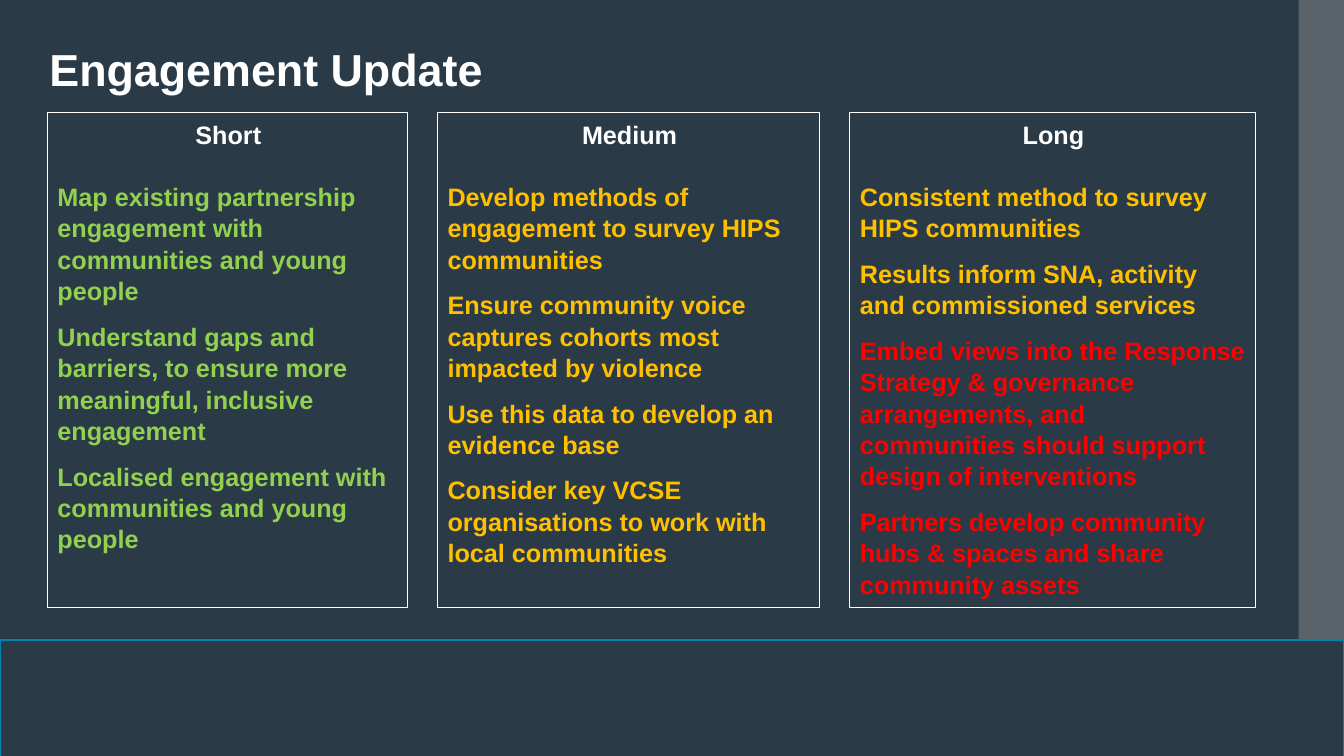
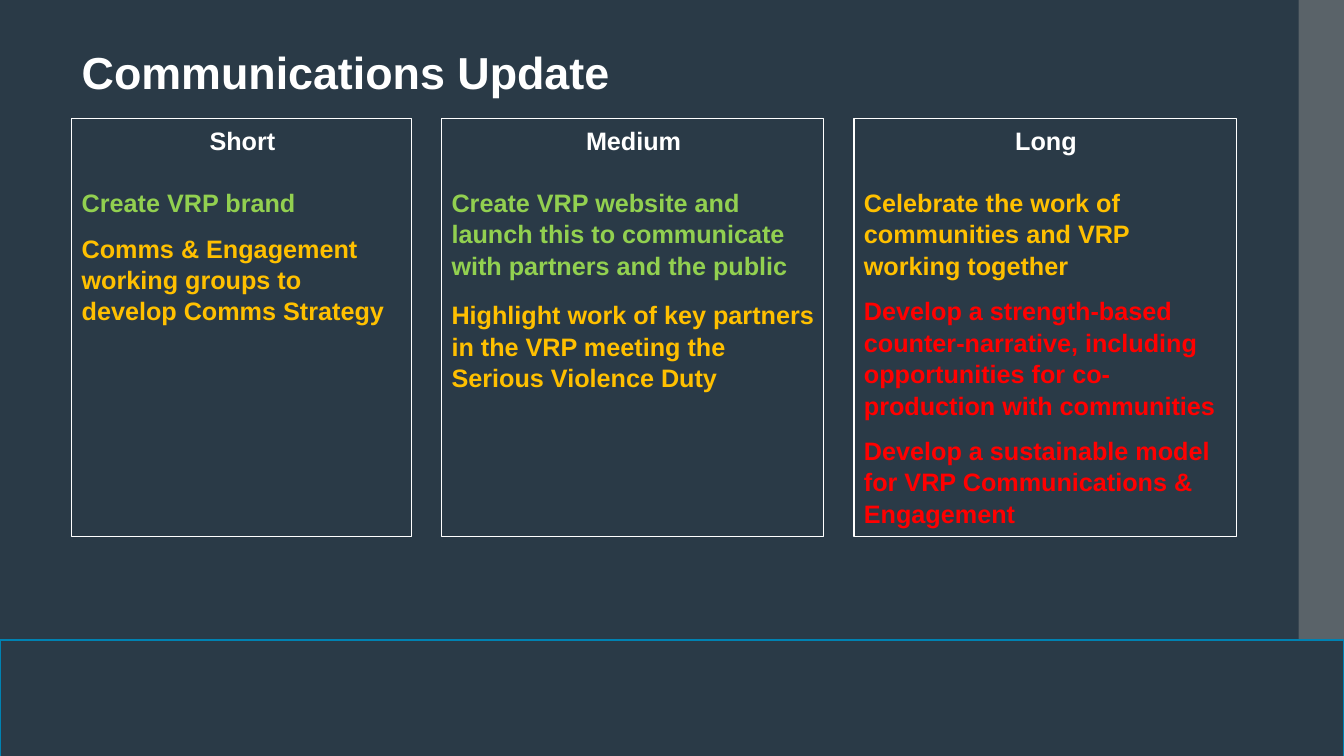
import dataclasses

import lxml.etree
import pptx
import pptx.dml.color
import pptx.enum.shapes
import pptx.enum.text
import pptx.oxml.ns
import pptx.util

Inches = pptx.util.Inches
Pt = pptx.util.Pt
Color = pptx.dml.color.RGBColor.from_string
qn = pptx.oxml.ns.qn
RECTANGLE = pptx.enum.shapes.MSO_SHAPE.RECTANGLE
ALIGN = pptx.enum.text.PP_ALIGN
TOP = pptx.enum.text.MSO_ANCHOR.TOP


@dataclasses.dataclass(frozen=True)
class Theme:
    font: str = "Arial"
    background: str = "2A3A47"
    strip: str = "8B8C8C"
    band_line: str = "0082B2"
    white: str = "FFFFFF"
    green: str = "92D050"
    amber: str = "FFC000"
    red: str = "FF0000"
    title_size: int = 32
    text_size: int = 18
    line_spacing: float = 1.04
    heading_gap: int = 22
    item_gap: int = 10


theme = Theme()
COLUMN_GAP = 0.3

# Each column: heading, width, gap between items, items with their status colour
pages = [
    dict(
        title="Engagement Update", title_box=(0.39, 0.32, 12.15, 0.8),
        left=0.47, top=1.12, height=4.91,
        columns=[
            ("Short", 3.57, theme.item_gap, [
                ("Map existing partnership engagement with communities and young people", theme.green),
                ("Understand gaps and barriers, to ensure more meaningful, inclusive engagement", theme.green),
                ("Localised engagement with communities and young people", theme.green),
            ]),
            ("Medium", 3.79, theme.item_gap, [
                ("Develop methods of engagement to survey HIPS communities", theme.amber),
                ("Ensure community voice captures cohorts most impacted by violence", theme.amber),
                ("Use this data to develop an evidence base", theme.amber),
                ("Consider key VCSE organisations to work with local communities", theme.amber),
            ]),
            ("Long", 4.02, theme.item_gap, [
                ("Consistent method to survey HIPS communities", theme.amber),
                ("Results inform SNA, activity and commissioned services", theme.amber),
                ("Embed views into the Response Strategy & governance arrangements, "
                 "and communities should support design of interventions", theme.red),
                ("Partners develop community hubs & spaces and share community assets", theme.red),
            ]),
        ],
    ),
    dict(
        title="Communications Update", title_box=(0.71, 0.35, 11.56, 0.84),
        left=0.71, top=1.18, height=4.14,
        columns=[
            ("Short", 3.37, theme.item_gap, [
                ("Create VRP brand", theme.green),
                ("Comms & Engagement working groups to develop Comms Strategy", theme.amber),
            ]),
            ("Medium", 3.79, 13, [
                ("Create VRP website and launch this to communicate with partners and the public", theme.green),
                ("Highlight work of key partners in the VRP meeting the Serious Violence Duty", theme.amber),
            ]),
            ("Long", 3.79, theme.item_gap, [
                ("Celebrate the work of communities and VRP working together", theme.amber),
                ("Develop a strength-based counter-narrative, including opportunities "
                 "for co-production with communities", theme.red),
                ("Develop a sustainable model for VRP Communications & Engagement", theme.red),
            ]),
        ],
    ),
]


def place(shape, left, top, width, height):
    shape.left, shape.top = Inches(left), Inches(top)
    shape.width, shape.height = Inches(width), Inches(height)
    frame = shape.text_frame
    frame.word_wrap = True
    frame.auto_size = pptx.enum.text.MSO_AUTO_SIZE.NONE
    frame.vertical_anchor = TOP
    frame.margin_left, frame.margin_right = Inches(0.1), Inches(0.08)
    return frame


def write(para, text, size, color, align=ALIGN.LEFT, space_before=0, line_spacing=1.0):
    para.text = text
    para.alignment = align
    para.line_spacing = line_spacing
    para.space_before, para.space_after = Pt(space_before), Pt(0)
    properties = para._p.get_or_add_pPr()
    properties.set("marL", "0")
    properties.set("indent", "0")
    lxml.etree.SubElement(properties, qn("a:buNone"))
    for span in para.runs:
        span.font.name = theme.font
        span.font.size = Pt(size)
        span.font.bold = True
        span.font.color.rgb = Color(color)


deck = pptx.Presentation()
deck.slide_width, deck.slide_height = Inches(13.33), Inches(7.5)
layout = deck.slide_layouts[1]

# Shared background
master = deck.slide_master
master.background.fill.solid()
master.background.fill.fore_color.rgb = Color(theme.background)

slides = [deck.slides.add_slide(layout) for page in pages]

# Shared side strip and bottom band, drawn once and moved to the master
strip = slides[0].shapes.add_shape(RECTANGLE, Inches(12.88), 0, Inches(0.45), Inches(7.5))
strip.fill.solid()
strip.fill.fore_color.rgb = Color(theme.strip)
strip.line.fill.background()
strip_color = strip.element.spPr.find(".//" + qn("a:srgbClr"))
lxml.etree.SubElement(strip_color, qn("a:alpha")).set("val", "50000")

band = slides[0].shapes.add_shape(RECTANGLE, 0, Inches(6.35), Inches(13.33), Inches(1.25))
band.fill.solid()
band.fill.fore_color.rgb = Color(theme.background)
band.line.color.rgb = Color(theme.band_line)
band.line.width = Pt(1.5)

master_tree = master.element.cSld.spTree
for index, shape in enumerate((strip, band)):
    shape.shadow.inherit = False
    shape.element.nvSpPr.cNvPr.set("id", str(20 + index))
    master_tree.insert(2 + index, shape.element)

for page, slide in zip(pages, slides):
    # Title
    frame = place(slide.shapes.title, *page["title_box"])
    frame.margin_top = Inches(0.09)
    write(frame.paragraphs[0], page["title"], theme.title_size, theme.white)

    # Columns: the first uses the body placeholder
    left = page["left"]
    for index, (heading, width, item_gap, items) in enumerate(page["columns"]):
        if index == 0:
            box = slide.placeholders[1]
        else:
            box = slide.shapes.add_shape(RECTANGLE, 0, 0, 0, 0)
            box.shadow.inherit = False
        frame = place(box, left, page["top"], width, page["height"])
        box.fill.background()
        box.line.color.rgb = Color(theme.white)
        box.line.width = Pt(0.75)
        write(frame.paragraphs[0], heading, theme.text_size, theme.white,
              ALIGN.CENTER, line_spacing=theme.line_spacing)
        for number, (text, color) in enumerate(items):
            space = item_gap if number else theme.heading_gap
            write(frame.add_paragraph(), text, theme.text_size, color,
                  space_before=space, line_spacing=theme.line_spacing)
        left += width + COLUMN_GAP

deck.save("out.pptx")
